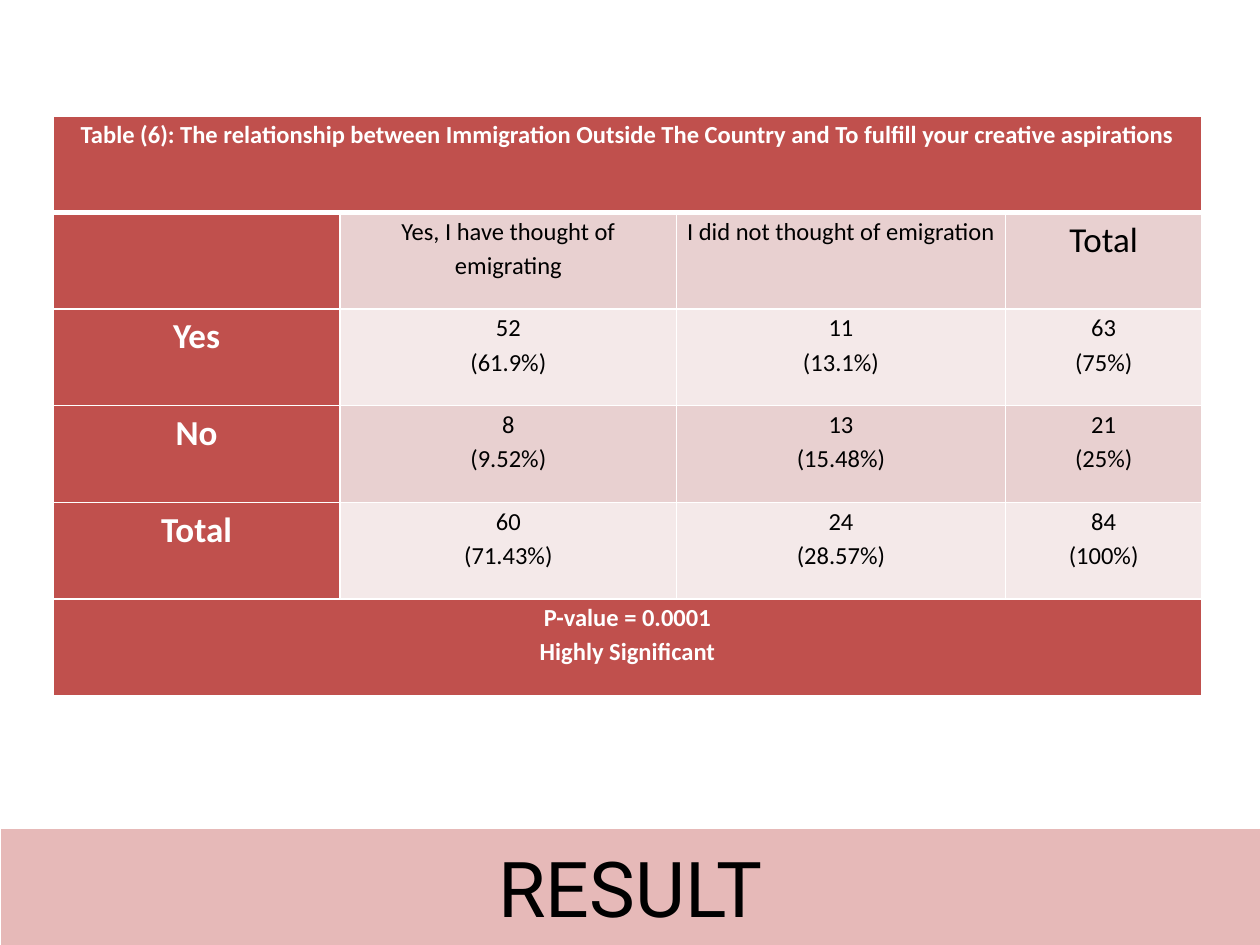
from lxml import etree
from pptx import Presentation
from pptx.dml.color import RGBColor
from pptx.enum import shapes, text
from pptx.oxml import ns
from pptx.util import Inches, Pt

COLORS = {"header": "C0504D", "odd": "E8D0D0", "even": "F4E9E9",
          "banner": "E6B9B8", "light": "FFFFFF", "dark": "000000"}

TITLE = "RESULT"
CAPTION = ("Table (6): The relationship between Immigration Outside The Country "
           "and To fulfill your creative aspirations")
# Each cell is a list of paragraphs.
ROWS = [
    [[CAPTION]],
    [[], ["Yes, I have thought of emigrating"], ["I did not thought of emigration"], ["Total"]],
    [["Yes"], ["52", "(61.9%)"], ["11", "(13.1%)"], ["63", "(75%)"]],
    [["No"], ["8", "(9.52%)"], ["13", "(15.48%)"], ["21", "(25%)"]],
    [["Total"], ["60", "(71.43%)"], ["24", "(28.57%)"], ["84", "(100%)"]],
    [["P-value = 0.0001", "Highly Significant"]],
]
COL_WIDTHS = [2.28, 2.67, 2.61, 1.56]
LEFT, TOP, HEIGHT = 0.42, 0.92, 4.6
LABELS = {"Yes", "No", "Total"}


def rgb(name):
    return RGBColor.from_string(COLORS[name])


def add_run(p, content, font, size, color, bold=False):
    p.alignment = text.PP_ALIGN.CENTER
    r = p.add_run()
    r.text = content
    r.font.name, r.font.size, r.font.bold = font, Pt(size), bold
    r.font.color.rgb = rgb(color)


def set_borders(cell, bottom):
    """White cell borders; they must precede the fill in tcPr."""
    tc_pr = cell._tc.get_or_add_tcPr()
    for i, (side, width) in enumerate([("L", 1), ("R", 1), ("T", 1), ("B", bottom)]):
        ln = etree.Element(ns.qn(f"a:ln{side}"), w=str(Pt(width)))
        fill = etree.SubElement(ln, ns.qn("a:solidFill"))
        etree.SubElement(fill, ns.qn("a:srgbClr"), val=COLORS["light"])
        tc_pr.insert(i, ln)


def fill_cell(cell, paragraphs, fill, bold):
    cell.fill.solid()
    cell.fill.fore_color.rgb = rgb(fill)
    cell.margin_left = cell.margin_right = Inches(0.07)
    cell.margin_top = cell.margin_bottom = 0
    tf = cell.text_frame
    for i, content in enumerate(paragraphs):
        p = tf.add_paragraph() if i else tf.paragraphs[0]
        p.line_spacing = 1.15
        add_run(p, content, "Calibri", 20 if content in LABELS else 14,
                "light" if bold else "dark", bold)


def add_results_table(slide):
    n_rows, n_cols = len(ROWS), len(COL_WIDTHS)
    table = slide.shapes.add_table(n_rows, n_cols, Inches(LEFT), Inches(TOP),
                                   Inches(sum(COL_WIDTHS)), Inches(HEIGHT)).table
    for column, width in zip(table.columns, COL_WIDTHS):
        column.width = Inches(width)
    for r, row in enumerate(ROWS):
        table.rows[r].height = Inches(HEIGHT / n_rows)
        for c in range(n_cols):
            set_borders(table.cell(r, c), 3 if r == 0 else 1)
        if len(row) == 1:
            table.cell(r, 0).merge(table.cell(r, n_cols - 1))
        for c, paragraphs in enumerate(row):
            is_header = c == 0
            band = "odd" if r % 2 else "even"
            fill_cell(table.cell(r, c), paragraphs,
                      "header" if is_header else band, is_header)


def add_banner(slide):
    sp = slide.shapes.add_shape(shapes.MSO_SHAPE.RECTANGLE, Inches(0.01), Inches(6.58),
                                Inches(9.99), Inches(0.92))
    sp.shadow.inherit = False
    sp.fill.solid()
    sp.fill.fore_color.rgb = rgb("banner")
    sp.line.fill.background()
    tf = sp.text_frame
    tf.vertical_anchor = text.MSO_ANCHOR.MIDDLE
    add_run(tf.paragraphs[0], TITLE, "Roboto", 44, "dark")


def main():
    prs = Presentation()
    prs.slide_width, prs.slide_height = Inches(10), Inches(7.5)
    slide = prs.slides.add_slide(prs.slide_layouts[6])
    add_banner(slide)
    add_results_table(slide)
    prs.save("out.pptx")


if __name__ == "__main__":
    main()
